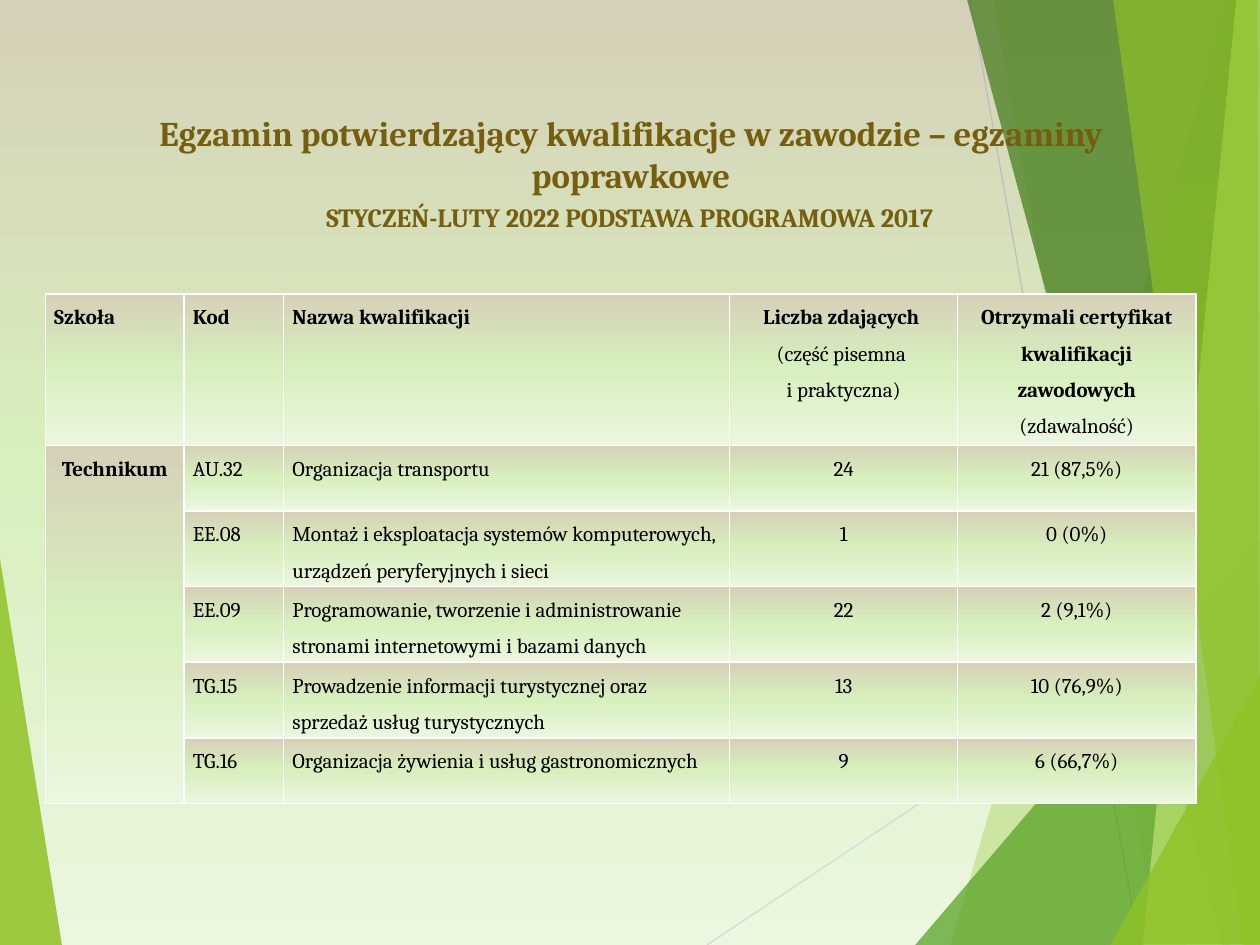
import pptx
import pptx.dml.color
import pptx.enum.shapes
import pptx.enum.text
import pptx.oxml
import pptx.oxml.ns
import pptx.util

Pt = pptx.util.Pt
qn = pptx.oxml.ns.qn
CENTER = pptx.enum.text.PP_ALIGN.CENTER
LEFT = pptx.enum.text.PP_ALIGN.LEFT
NS = pptx.oxml.ns.nsdecls("a")

FONT = "Cambria"
GOLD = "755E0D"
BLACK = "000000"
GRADIENT = [(0, "D6D0B8"), (50, "D7F0BD"), (100, "EBF7DF")]

# Decoration: points, colour, opacity in percent
LEFT_BLADE = ([(-0.5, 316), (35.5, 540.5), (-0.5, 540)], "90C226", 85)
RIGHT_BLADES = [
    ([(702, 0), (543, 540), (721, 540.5), (720.5, 0.5)], "90C226", 30),
    ([(567.5, -0.5), (661.5, 540), (720.5, 540), (720.5, -0.5)], "90C226", 20),
    ([(523, 540), (720, 309), (720.5, 540)], "54A021", 72),
    ([(552.5, -0.5), (698.5, 540), (720.5, 539.5), (720.5, -0.5)], "3F7819", 70),
    ([(706.5, -0.5), (653, 540), (720.5, 540), (720, -0.5)], "C0E474", 70),
    ([(636, -0.5), (710, 540), (720, 540), (718.5, -0.5)], "90C226", 65),
    ([(634.5, 540), (720.5, 385), (720.5, 539.5)], "90C226", 80),
]

# Table: the header holds (text, bold) parts
COLUMNS = [79.2, 56.9, 254.9, 130.3, 136.1]
HEADER_HEIGHT, ROW_HEIGHT = 55.5, 37.5
HEADER = [
    [("Szkoła", True)],
    [("Kod", True)],
    [("Nazwa kwalifikacji", True)],
    [("Liczba zdających \n", True), ("(część pisemna \ni praktyczna)", False)],
    [("Otrzymali certyfikat kwalifikacji zawodowych ", True), ("(zdawalność)", False)],
]
SCHOOL = "Technikum"
RESULTS = [
    ("AU.32", "Organizacja transportu", "24", "21 (87,5%)"),
    ("EE.08", "Montaż i eksploatacja systemów komputerowych, urządzeń peryferyjnych i sieci",
     "1", "0 (0%)"),
    ("EE.09", "Programowanie, tworzenie i administrowanie stronami internetowymi i bazami danych",
     "22", "2 (9,1%)"),
    ("TG.15", "Prowadzenie informacji turystycznej oraz sprzedaż usług turystycznych",
     "13", "10 (76,9%)"),
    ("TG.16", "Organizacja żywienia i usług gastronomicznych", "9", "6 (66,7%)"),
]


def color(hex_value):
    return pptx.dml.color.RGBColor.from_string(hex_value)


def set_gradient(fill, parent):
    """Give a background or a cell the vertical three-stop gradient."""
    fill.solid()
    fill.fore_color.rgb = color(GRADIENT[0][1])
    stops = "".join(f'<a:gs pos="{pos * 1000}"><a:srgbClr val="{c}"/></a:gs>'
                    for pos, c in GRADIENT)
    gradient = pptx.oxml.parse_xml(
        f'<a:gradFill {NS} rotWithShape="1"><a:gsLst>{stops}</a:gsLst>'
        '<a:lin ang="5400000" scaled="0"/></a:gradFill>')
    parent.replace(parent.find(qn("a:solidFill")), gradient)


def set_borders(tcPr):
    for i, side in enumerate(("lnL", "lnR", "lnT", "lnB")):
        tcPr.insert(i, pptx.oxml.parse_xml(
            f'<a:{side} {NS} w="12700"><a:solidFill><a:srgbClr val="FFFFFF"/>'
            f'</a:solidFill></a:{side}>'))


def add_blade(s, points, hex_value, opacity):
    corners = [(Pt(x), Pt(y)) for x, y in points]
    builder = s.shapes.build_freeform(*corners[0])
    builder.add_line_segments(corners[1:], close=True)
    sp = builder.convert_to_shape()
    sp.shadow.inherit = False
    sp.line.fill.background()
    sp.fill.solid()
    sp.fill.fore_color.rgb = color(hex_value)
    clr = sp._element.spPr.find(qn("a:solidFill"))[0]
    clr.append(pptx.oxml.parse_xml(f'<a:alpha {NS} val="{opacity * 1000}"/>'))


def add_line(s, x1, y1, x2, y2, hex_value):
    line = s.shapes.add_connector(pptx.enum.shapes.MSO_CONNECTOR.STRAIGHT,
                                  Pt(x1), Pt(y1), Pt(x2), Pt(y2))
    line.line.color.rgb = color(hex_value)
    line.line.width = Pt(0.75)
    line._element.spPr.append(pptx.oxml.parse_xml(f"<a:effectLst {NS}/>"))


def write(p, parts, size, hex_value, align, spacing):
    """Fill a paragraph with (text, bold) parts; a newline is a line break."""
    p.alignment = align
    p.line_spacing = spacing
    for text, bold in parts:
        for i, line in enumerate(text.split("\n")):
            if i:
                p.add_line_break()
            if line:
                r = p.add_run()
                r.text = line
                r.font.name = FONT
                r.font.size = Pt(size)
                r.font.bold = bold
                r.font.color.rgb = color(hex_value)


def add_heading(s, left, top, width, height, text, size, spacing):
    tf = s.shapes.add_textbox(Pt(left), Pt(top), Pt(width), Pt(height)).text_frame
    tf.word_wrap = True
    write(tf.paragraphs[0], [(text, True)], size, GOLD, CENTER, spacing)


def write_cell(cell, parts, align):
    cell.margin_left = cell.margin_right = Pt(5)
    cell.margin_top = cell.margin_bottom = 0
    write(cell.text_frame.paragraphs[0], parts, 12, BLACK, align, 1.5)


def add_results_table(s, left, top):
    height = HEADER_HEIGHT + ROW_HEIGHT * len(RESULTS)
    frame = s.shapes.add_table(len(RESULTS) + 1, len(COLUMNS), Pt(left), Pt(top),
                               Pt(sum(COLUMNS)), Pt(height))
    table = frame.table
    for column, width in zip(table.columns, COLUMNS):
        column.width = Pt(width)
    for i, row in enumerate(table.rows):
        row.height = Pt(ROW_HEIGHT if i else HEADER_HEIGHT)
    for cell in table.iter_cells():
        tcPr = cell._tc.get_or_add_tcPr()
        set_gradient(cell.fill, tcPr)
        set_borders(tcPr)

    aligns = [LEFT, LEFT, LEFT, CENTER, CENTER]
    for j, parts in enumerate(HEADER):
        write_cell(table.cell(0, j), parts, aligns[j])
    school = table.cell(1, 0)
    school.merge(table.cell(len(RESULTS), 0))
    write_cell(school, [(SCHOOL, True)], CENTER)
    for i, result in enumerate(RESULTS, 1):
        for j, text in enumerate(result, 1):
            write_cell(table.cell(i, j), [(text, False)], aligns[j])


def main():
    prs = pptx.Presentation()
    prs.slide_width, prs.slide_height = Pt(720), Pt(540)
    s = prs.slides.add_slide(prs.slide_layouts[6])

    # Background and decoration
    fill = s.background.fill
    fill.solid()
    set_gradient(fill, s._element.cSld.find(qn("p:bg")).find(qn("p:bgPr")))
    add_blade(s, *LEFT_BLADE)
    add_line(s, 404, 540, 720.5, 329, "D9D9D9")
    add_line(s, 554.5, 0, 651, 540, "BFBFBF")
    for blade in RIGHT_BLADES:
        add_blade(s, *blade)

    # Headings
    add_heading(s, 26, 60.5, 669, 39.5,
                "Egzamin potwierdzający kwalifikacje w zawodzie – egzaminy poprawkowe", 19.8, 1.0)
    # Results
    add_results_table(s, 26, 168)
    add_heading(s, 173, 116.5, 374, 39.5,
                "STYCZEŃ-LUTY 2022 PODSTAWA PROGRAMOWA 2017", 15, 0.7)

    prs.save("out.pptx")


if __name__ == "__main__":
    main()
